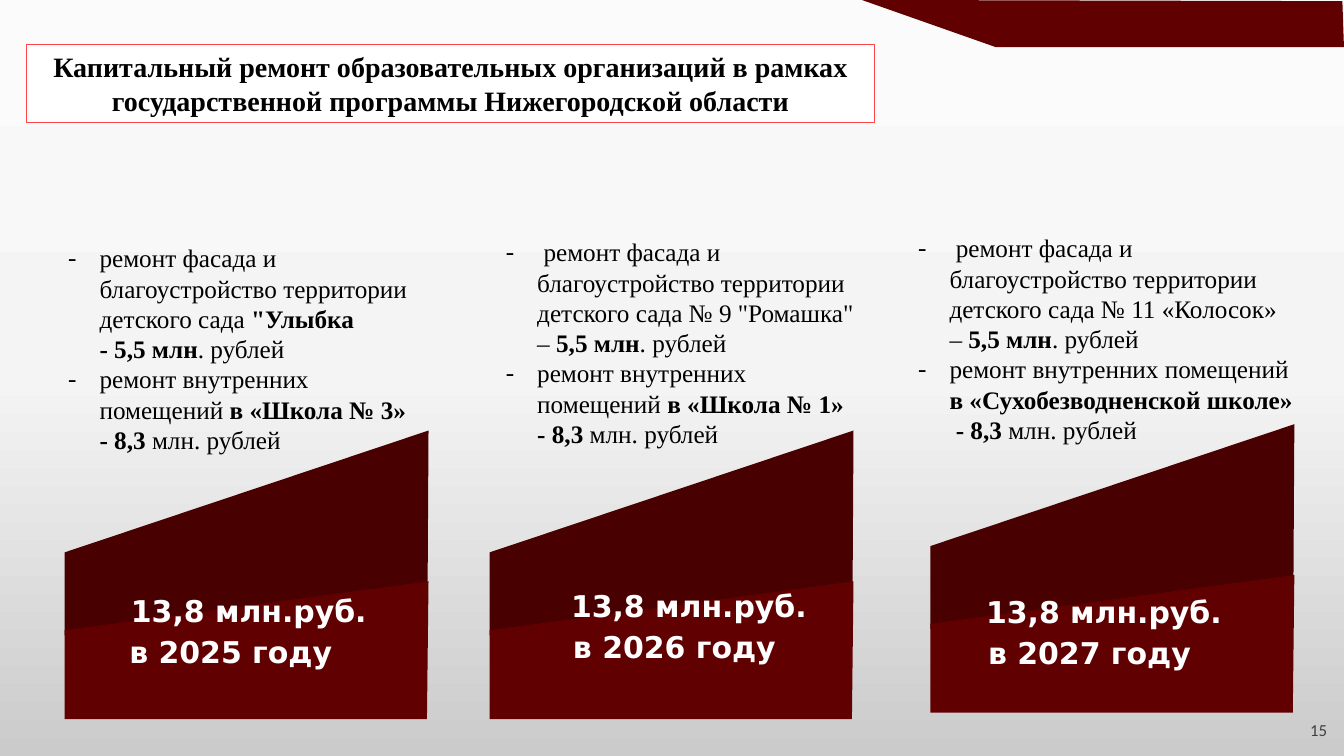
from pptx import Presentation
from pptx.dml.color import RGBColor
from pptx.enum.text import MSO_ANCHOR, MSO_AUTO_SIZE, PP_ALIGN
from pptx.oxml.ns import qn
from pptx.util import Cm, Pt
from copy import deepcopy
from lxml.etree import SubElement

BLACK = RGBColor(0x00, 0x00, 0x00)
WHITE = RGBColor(0xFF, 0xFF, 0xFF)
MAROON = RGBColor(0x60, 0x00, 0x00)
DARK_MAROON = RGBColor(0x48, 0x00, 0x00)
FRAME_RED = RGBColor(0xFF, 0x45, 0x45)
NUMBER_GREY = RGBColor(0x3F, 0x3F, 0x3F)
BACKDROP = [RGBColor(0xFB, 0xFB, 0xFB), RGBColor(0xF4, 0xF4, 0xF4), RGBColor(0xCB, 0xCB, 0xCB)]

SERIF = "Times New Roman"
SANS = "DejaVu Sans"

# Per year: panel left and lift, works box, amount box (cm),
# then paragraphs of (text, bold) runs; "\n" starts a new line
YEARS = [
    ("2025", 1.63, 0, (1.47, 5.99, 9.45, 5.64), (2.13, 14.48, 8.28, 3.33), [
        [("ремонт фасада и благоустройство территории детского сада ", False),
         ("\"Улыбка\n- 5,5 млн", True), (". рублей", False)],
        [("ремонт внутренних помещений ", False),
         ("в «Школа № 3»\n- 8,3", True), (" млн. рублей", False)]]),
    ("2026", 12.34, 0, (12.5, 5.84, 9.45, 5.64), (13.31, 14.43, 8.1, 3.2), [
        [(" ремонт фасада и благоустройство территории детского сада № 9 \"Ромашка\"\n– ", False),
         ("5,5 млн", True), (". рублей", False)],
        [("ремонт внутренних помещений ", False),
         ("в «Школа № 1»\n- 8,3", True), (" млн. рублей", False)]]),
    ("2027", 23.45, 0.16, (22.89, 5.74, 10.06, 5.64), (23.77, 14.58, 8.1, 3.2), [
        [(" ремонт фасада и благоустройство территории детского сада № 11 «Колосок»\n– ", False),
         ("5,5 млн", True), (". рублей", False)],
        [("ремонт внутренних помещений ", False),
         ("в «Сухобезводненской школе»\n - 8,3", True), (" млн. рублей", False)]]),
]


def set_backdrop(slide):
    fill = slide.background.fill
    fill.gradient()
    fill.gradient_angle = 270
    stop_list = slide.element.find(".//" + qn("a:gsLst"))
    stop_list.insert(1, deepcopy(stop_list[0]))
    for stop, position, color in zip(fill.gradient_stops, (0, 0.5, 1), BACKDROP):
        stop.position = position
        stop.color.rgb = color


def add_polygon(slide, corners, color):
    points = [(Cm(x), Cm(y)) for x, y in corners]
    builder = slide.shapes.build_freeform(*points[0], scale=1.0)
    builder.add_line_segments(points[1:], close=True)
    polygon = builder.convert_to_shape()
    polygon.fill.solid()
    polygon.fill.fore_color.rgb = color
    polygon.line.fill.background()
    polygon.shadow.inherit = False


def add_run(paragraph, text, font, size, color, bold=False):
    for i, line in enumerate(text.split("\n")):
        if i:
            paragraph.add_line_break()
        run = paragraph.add_run()
        run.text = line
        run.font.name = font
        run.font.size = Pt(size)
        run.font.color.rgb = color
        run.font.bold = bold


def add_text_frame(slide, place):
    frame = slide.shapes.add_textbox(*map(Cm, place)).text_frame
    frame.word_wrap = True
    return frame


def set_indent(paragraph, left, first=0):
    properties = paragraph._p.get_or_add_pPr()
    properties.set("marL", str(Cm(left)))
    properties.set("indent", str(Cm(first)))
    return properties


def set_title(slide, text):
    title = slide.shapes.title
    title.left, title.top, title.width, title.height = map(Cm, (0.66, 1.12, 21.39, 1.96))
    title.fill.solid()
    title.fill.fore_color.rgb = WHITE
    title.line.color.rgb = FRAME_RED
    title.line.width = Pt(0.75)
    frame = title.text_frame
    frame.word_wrap = True
    frame.auto_size = MSO_AUTO_SIZE.NONE
    frame.vertical_anchor = MSO_ANCHOR.MIDDLE
    heading = frame.paragraphs[0]
    heading.alignment = PP_ALIGN.CENTER
    add_run(heading, text, SERIF, 20, BLACK, True)


def add_panel(slide, left, lift):
    # Dark sloping back with a lighter front over its lower part
    back = [(0, 13.92), (9.17, 10.85), (9.14, 16.01), (0, 16.01)]
    front = [(0, 15.88), (9.17, 14.65), (9.13, 18.12), (0, 18.12)]
    for outline, color in ((back, DARK_MAROON), (front, MAROON)):
        add_polygon(slide, [(left + x, y - lift) for x, y in outline], color)


def add_amount(slide, place, year):
    frame = add_text_frame(slide, place)
    frame.vertical_anchor = MSO_ANCHOR.MIDDLE
    frame.margin_left = frame.margin_right = frame.margin_top = Cm(0.33)
    frame.margin_bottom = Cm(0.96)
    amount = frame.paragraphs[0]
    amount.alignment = PP_ALIGN.CENTER
    period = frame.add_paragraph()
    set_indent(period, 0.8)
    for paragraph, text in ((amount, "13,8 млн.руб."), (period, f"в {year} году")):
        paragraph.line_spacing = 1.15
        add_run(paragraph, text, SANS, 21.4, WHITE, True)


def add_works(slide, place, works):
    frame = add_text_frame(slide, place)
    for i, runs in enumerate(works):
        work = frame.add_paragraph() if i else frame.paragraphs[0]
        properties = set_indent(work, 0.79, -0.79)
        SubElement(properties, qn("a:buFont")).set("typeface", SERIF)
        SubElement(properties, qn("a:buChar")).set("char", "-")
        for text, bold in runs:
            add_run(work, text, SERIF, 18, BLACK, bold)


def main():
    presentation = Presentation()
    presentation.slide_width = Cm(33.87)
    presentation.slide_height = Cm(19.05)
    slide = presentation.slides.add_slide(presentation.slide_layouts[5])

    # Background, corner ribbon and title
    set_backdrop(slide)
    add_polygon(slide, [(33.83, 0.03), (21.72, 0), (25.1, 1.19), (33.87, 1.19)], MAROON)
    set_title(slide, "Капитальный ремонт образовательных организаций в рамках "
                     "государственной программы Нижегородской области")

    # One column per year
    for year, left, lift, works_place, amount_place, works in YEARS:
        add_panel(slide, left, lift)
        add_amount(slide, amount_place, year)
        add_works(slide, works_place, works)

    # Slide number
    number = add_text_frame(slide, (32.77, 18.08, 0.99, 1.02)).paragraphs[0]
    number.line_spacing = 0.9
    add_run(number, "15", "Calibri", 12, NUMBER_GREY)

    presentation.save("out.pptx")


if __name__ == "__main__":
    main()
